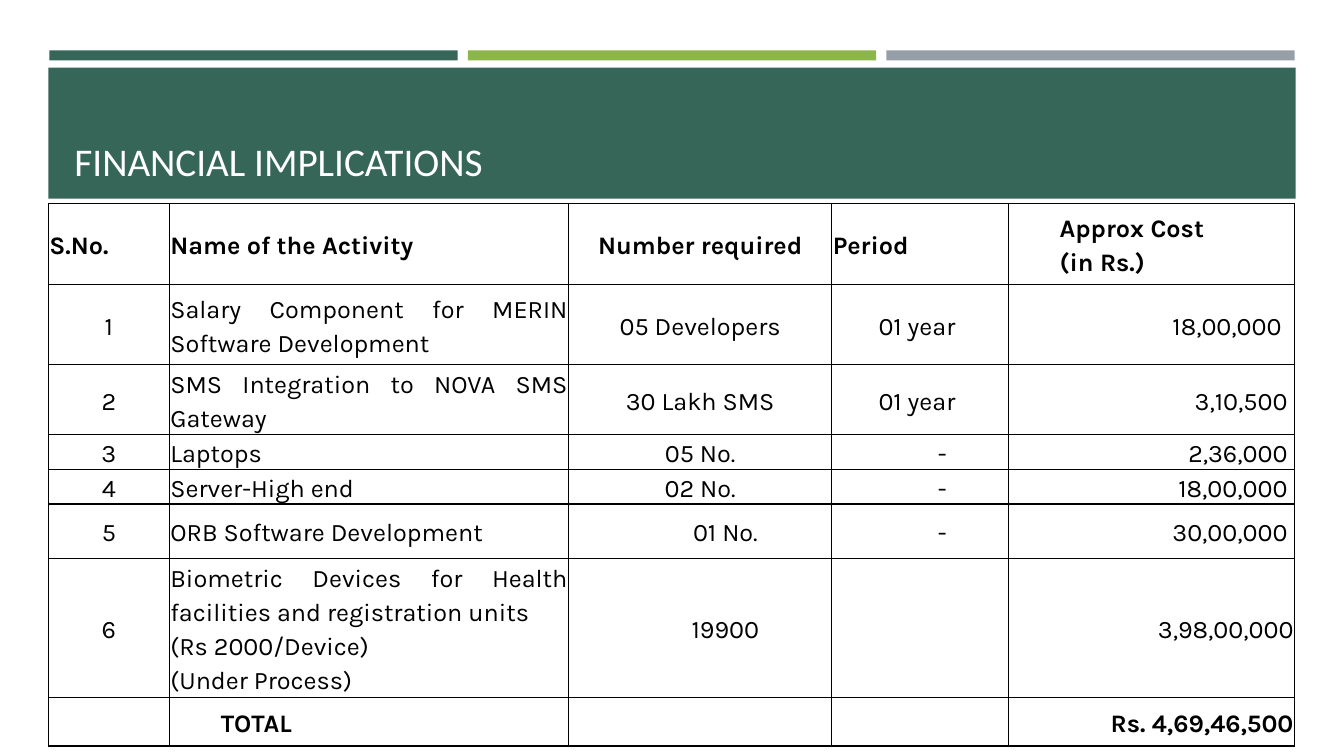
from dataclasses import dataclass

from lxml import etree
from pptx import Presentation
from pptx import util as u
from pptx.dml.color import RGBColor
from pptx.enum import shapes, text
from pptx.oxml import ns


@dataclass(frozen=True)
class Theme:
    green: str = "366658"
    lime: str = "8CB64A"
    grey: str = "969FA7"
    white: str = "FFFFFF"
    black: str = "000000"
    title_font: str = "Calibri"
    table_font: str = "Karla"
    title_size: int = 28
    table_size: int = 18
    border_width: int = 1


@dataclass(frozen=True)
class Bar:
    left: float
    top: float
    width: float
    height: float
    color: str


@dataclass(frozen=True)
class Entry:
    """Content of one cell; each line is a paragraph."""
    lines: tuple[str, ...]
    align: text.PP_ALIGN
    indent: float = 0


THEME = Theme()
LEFT, CENTER = text.PP_ALIGN.LEFT, text.PP_ALIGN.CENTER
RIGHT, JUSTIFY = text.PP_ALIGN.RIGHT, text.PP_ALIGN.JUSTIFY

BARS = [
    Bar(0.49 + 4.15 * index, 0.5, 4.05, 0.1, color)
    for index, color in enumerate((THEME.green, THEME.lime, THEME.grey))
] + [Bar(0.48, 0.67, 12.37, 1.3, THEME.green)]

COLUMN_WIDTHS = (1.2, 3.96, 2.61, 1.75, 2.84)
ROW_HEIGHTS = (0.8, 0.8, 0.64, 0.31, 0.34, 0.54, 1.29, 0.48)


def activity(number: str, name: tuple[str, ...], required: str, period: str,
             cost: str, required_indent: float = 0) -> list[Entry]:
    return [
        Entry((number,), CENTER),
        Entry(name, JUSTIFY),
        Entry((required,), CENTER, required_indent),
        Entry((period,), CENTER, 0.5 if period == "- " else 0),
        Entry((cost,), RIGHT),
    ]


HEADER = [
    Entry(("S.No.",), LEFT),
    Entry(("Name of the Activity",), LEFT),
    Entry(("Number required",), CENTER),
    Entry(("Period",), LEFT),
    Entry(("Approx Cost \n(in Rs.)",), LEFT, 0.5),
]
ACTIVITIES = [
    activity("1", ("Salary Component for MERIN Software Development ",),
             "05 Developers", "01 year ", "18,00,000  "),
    activity("2", ("SMS Integration to NOVA SMS Gateway ",),
             "30 Lakh SMS", "01 year ", "3,10,500 "),
    activity("3", ("Laptops ",), "05 No.", "- ", "2,36,000 "),
    activity("4", ("Server-High end ",), "02 No.", "- ", "18,00,000 "),
    activity("5", ("ORB Software Development ",), "01 No.", "- ", "30,00,000 ", 0.5),
    activity("6", ("Biometric Devices for Health facilities and registration units",
                   "(Rs 2000/Device)", "(Under Process)"),
             "19900", "", "3,98,00,000", 0.5),
]
TOTAL = [
    Entry(("",), CENTER),
    Entry(("TOTAL ",), JUSTIFY, 0.5),
    Entry(("",), CENTER),
    Entry(("",), CENTER),
    Entry(("Rs. 4,69,46,500",), RIGHT),
]


def style_font(font, name: str, size: int, color: str, bold: bool = False) -> None:
    font.name = name
    font.size = u.Pt(size)
    font.bold = bold
    font.color.rgb = RGBColor.from_string(color)


def draw_bar(page, bar: Bar) -> None:
    box = page.shapes.add_shape(
        shapes.MSO_SHAPE.RECTANGLE,
        *(u.Inches(n) for n in (bar.left, bar.top, bar.width, bar.height)))
    box.shadow.inherit = False
    box.fill.solid()
    box.fill.fore_color.rgb = RGBColor.from_string(bar.color)
    box.line.fill.background()


def draw_title(page, title: str) -> None:
    box = page.shapes.add_textbox(
        u.Inches(0.64), u.Inches(0.77), u.Inches(12.06), u.Inches(1.11))
    frame = box.text_frame
    frame.word_wrap = True
    frame.vertical_anchor = text.MSO_ANCHOR.BOTTOM
    para = frame.paragraphs[0]
    para.text = title
    style_font(para.font, THEME.title_font, THEME.title_size, THEME.white)


def add_borders(cell) -> None:
    properties = cell._tc.get_or_add_tcPr()
    for position, side in enumerate(("lnL", "lnR", "lnT", "lnB")):
        line = etree.Element(ns.qn(f"a:{side}"), w=str(u.Pt(THEME.border_width)))
        fill = etree.SubElement(line, ns.qn("a:solidFill"))
        etree.SubElement(fill, ns.qn("a:srgbClr"), val=THEME.black)
        properties.insert(position, line)


def fill_cell(cell, entry: Entry, bold: bool) -> None:
    cell.fill.background()
    cell.vertical_anchor = text.MSO_ANCHOR.MIDDLE
    cell.margin_left = cell.margin_right = u.Inches(0.01)
    cell.margin_top = cell.margin_bottom = 0
    add_borders(cell)
    frame = cell.text_frame
    for index, line in enumerate(entry.lines):
        para = frame.add_paragraph() if index else frame.paragraphs[0]
        para.text = line
        para.alignment = entry.align
        para.line_spacing = 1.15
        if entry.indent:
            para._p.get_or_add_pPr().set("marL", str(u.Inches(entry.indent)))
        style_font(para.font, THEME.table_font, THEME.table_size, THEME.black, bold)


def draw_cost_table(page) -> None:
    rows = [HEADER, *ACTIVITIES, TOTAL]
    table = page.shapes.add_table(
        len(rows), len(COLUMN_WIDTHS), u.Inches(0.48), u.Inches(2.02),
        u.Inches(sum(COLUMN_WIDTHS)), u.Inches(sum(ROW_HEIGHTS))).table
    table.first_row = table.horz_banding = False
    for column, width in zip(table.columns, COLUMN_WIDTHS):
        column.width = u.Inches(width)
    for row, height, entries in zip(table.rows, ROW_HEIGHTS, rows):
        row.height = u.Inches(height)
        for cell, entry in zip(row.cells, entries):
            fill_cell(cell, entry, bold=entries in (HEADER, TOTAL))


def main() -> None:
    deck = Presentation()
    deck.slide_width, deck.slide_height = u.Inches(13.33), u.Inches(7.5)
    page = deck.slides.add_slide(deck.slide_layouts[6])
    for bar in BARS:
        draw_bar(page, bar)
    draw_title(page, "FINANCIAL IMPLICATIONS")
    draw_cost_table(page)
    deck.save("out.pptx")


if __name__ == "__main__":
    main()
